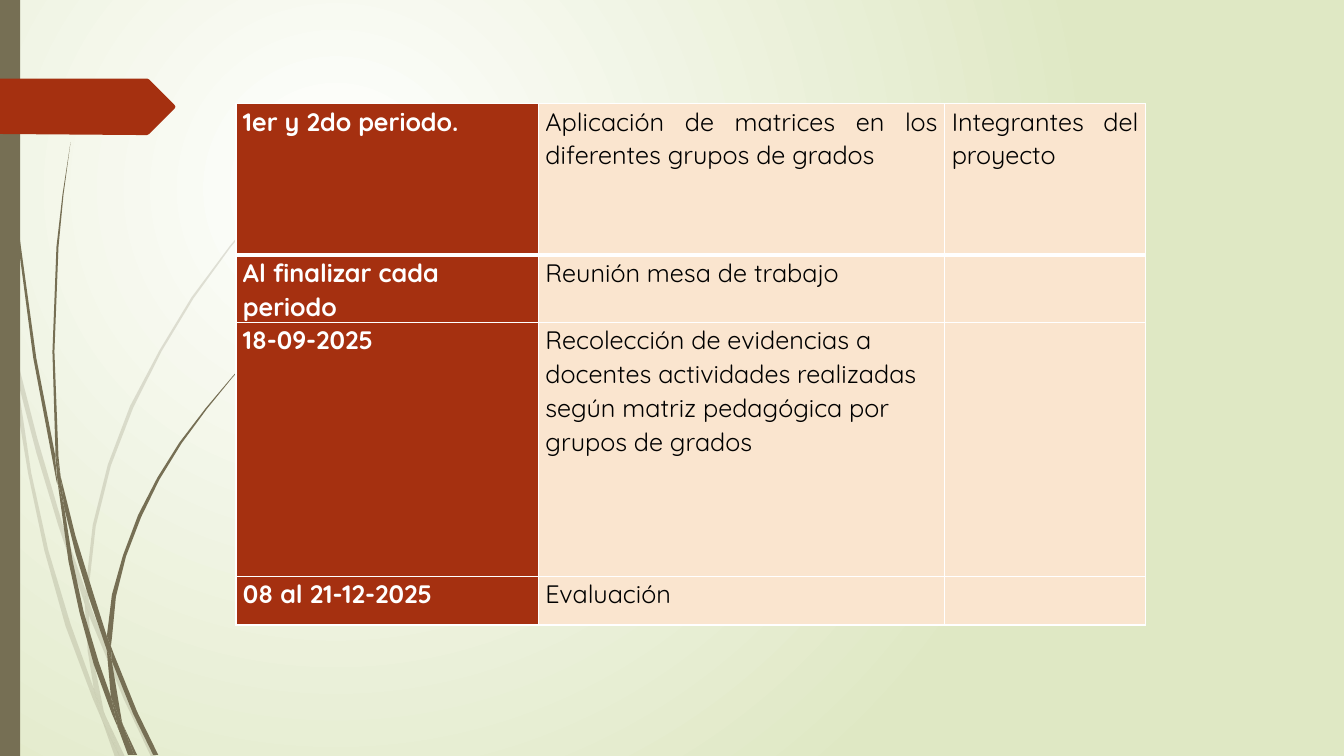
from lxml import etree
from pptx import Presentation
from pptx.dml.color import RGBColor
from pptx.enum.text import PP_ALIGN
from pptx.enum.shapes import MSO_SHAPE
from pptx.oxml.ns import qn
from pptx.util import Inches, Pt

LEFT, JUSTIFY = PP_ALIGN.LEFT, PP_ALIGN.JUSTIFY
RECTANGLE = MSO_SHAPE.RECTANGLE
GRID = Inches(0.01)
COLUMNS, ROWS = 1333, 750
WHITE = RGBColor(0xFF, 0xFF, 0xFF)
BLACK = RGBColor(0, 0, 0)
SAGE = RGBColor(0xDF, 0xE8, 0xC4)
OLIVE = RGBColor(0x76, 0x6F, 0x54)
RUST = RGBColor(0xA5, 0x30, 0x10)
CREAM = RGBColor(0xFA, 0xE5, 0xCF)
FONT = "Quicksand"
THIN, THICK = Pt(1), Pt(3)

PALE_BLADES = [
    [(11, 350), (9, 322), (0, 282), (0, 299), (10, 344)],
    [(58, 522), (84, 599), (85, 586), (62, 520), (37, 435), (14, 345),
     (17, 376), (36, 449)],
    [(92, 607), (88, 596), (88, 610), (123, 694), (150, 751), (155, 751),
     (127, 692)],
    [(119, 751), (124, 751), (105, 711)],
    [(93, 683), (70, 619), (48, 546), (31, 469), (17, 376), (11, 350),
     (18, 410), (28, 470), (44, 546), (65, 621), (92, 693), (101, 714),
     (99, 707)],
    [(84, 599), (87, 646), (93, 683), (96, 692), (105, 711), (103, 706),
     (91, 646), (88, 610), (88, 608)],
    [(88, 584), (95, 522), (110, 462), (132, 405), (160, 349), (192, 296),
     (229, 245), (268, 198), (290, 175), (312, 154), (312, 153), (289, 175),
     (268, 197), (228, 244), (190, 295), (158, 348), (129, 403), (107, 461),
     (92, 521), (85, 584), (85, 586), (88, 596)],
    [(101, 714), (114, 751), (119, 751)],
    [(88, 608), (88, 610), (88, 596), (85, 586), (84, 599)],
    [(96, 692), (93, 683), (99, 707), (101, 714), (119, 751), (105, 711)],
]
DARK_BLADES = [
    [(7, 110), (17, 233), (33, 355), (56, 477), (57, 481), (55, 457),
     (55, 453), (36, 355), (19, 232), (8, 109), (5, 48), (4, 0), (3, 0),
     (4, 48)],
    [(88, 592), (106, 645), (106, 633), (106, 631), (93, 590), (75, 532),
     (60, 472), (64, 505), (75, 549)],
    [(113, 649), (110, 641), (111, 656), (132, 708), (152, 749), (157, 749),
     (136, 706)],
    [(110, 691), (98, 657), (83, 607), (72, 556), (64, 505), (57, 477),
     (68, 557), (79, 608), (93, 659), (111, 708), (117, 722), (116, 717)],
    [(60, 472), (58, 453), (54, 349), (58, 245), (63, 193), (70, 141),
     (62, 193), (56, 245), (52, 349), (55, 449)],
    [(133, 749), (136, 749), (122, 719)],
    [(57, 477), (64, 505), (60, 472), (55, 449), (55, 453)],
    [(111, 633), (115, 592), (125, 552), (140, 513), (158, 476), (180, 440),
     (205, 406), (231, 374), (245, 359), (261, 344), (260, 344), (245, 358),
     (231, 373), (204, 405), (178, 439), (156, 474), (137, 511), (122, 551),
     (111, 590), (106, 631), (110, 641)],
    [(117, 722), (127, 749), (131, 749)],
    [(106, 645), (110, 691), (116, 706), (122, 719), (121, 716), (111, 656),
     (109, 651)],
    [(106, 645), (109, 651), (111, 656), (110, 641), (106, 631), (106, 633)],
    [(116, 706), (110, 691), (116, 717), (117, 722), (130, 749), (133, 749),
     (122, 719)],
]
BANNER = [(173, 108), (148, 133), (146, 134), (136, 134), (0, 133), (0, 78),
          (146, 78), (148, 79), (173, 104), (174, 106)]

TABLE_PLACE = (234, 103, 902, 498)
COLUMN_WIDTHS = (300, 403, 199)
ROW_HEIGHTS = (150, 48, 252, 48)
SCHEDULE = [
    [("1er y 2do periodo.", LEFT),
     ("Aplicación de matrices en los diferentes grupos de grados", JUSTIFY),
     ("Integrantes del proyecto", JUSTIFY)],
    [("Al finalizar cada periodo", LEFT),
     ("Reunión mesa de trabajo", JUSTIFY), ("", LEFT)],
    [("18-09-2025", LEFT),
     ("Recolección de evidencias a docentes actividades realizadas "
      "según matriz pedagógica por grupos de grados", LEFT), ("", LEFT)],
    [("08 al 21-12-2025", LEFT), ("Evaluación", LEFT), ("", LEFT)],
]


def paint_background(page):
    fill = page.background.fill
    fill.gradient()
    for stop, color in zip(fill.gradient_stops, (WHITE, SAGE)):
        stop.color.rgb = color
    gradient = next(page.element.iter(qn("a:gradFill")))
    for line in gradient.findall(qn("a:lin")):
        gradient.remove(line)
    circle = etree.SubElement(gradient, qn("a:path"), path="circle")
    etree.SubElement(circle, qn("a:fillToRect"),
                     l="50000", t="50000", r="100000", b="100000")


def paint_shape(shape, color, opacity=100):
    shape.shadow.inherit = False
    shape.line.fill.background()
    shape.fill.solid()
    shape.fill.fore_color.rgb = color
    if opacity < 100:
        tint = next(shape.element.spPr.iter(qn("a:srgbClr")))
        etree.SubElement(tint, qn("a:alpha"), val=str(opacity * 1000))


def add_outline(page, points, color, opacity=100):
    builder = page.shapes.build_freeform(*points[0], scale=GRID)
    builder.add_line_segments(points[1:], close=True)
    paint_shape(builder.convert_to_shape(), color, opacity)


def add_border(cell, side, width):
    properties = cell._tc.get_or_add_tcPr()
    line = etree.SubElement(properties, qn(f"a:ln{side}"), w=str(width))
    paint = etree.SubElement(line, qn("a:solidFill"))
    etree.SubElement(paint, qn("a:srgbClr"), val=str(WHITE))


def fill_cell(cell, row, column, text, alignment):
    widths = {"L": THIN, "R": THIN,
              "T": THICK if row == 1 else THIN,
              "B": THICK if row == 0 else THIN}
    for side, width in widths.items():
        add_border(cell, side, width)
    cell.fill.solid()
    cell.fill.fore_color.rgb = CREAM if column else RUST
    cell.margin_left = cell.margin_right = 7 * GRID
    cell.margin_top = cell.margin_bottom = 0
    if not text:
        return
    para = cell.text_frame.paragraphs[0]
    para.alignment = alignment
    para.line_spacing = 1.07
    para.space_after = Pt(8)
    span = para.add_run()
    span.text = text
    span.font.name = FONT
    span.font.size = Pt(18)
    span.font.bold = column == 0
    span.font.color.rgb = BLACK if column else WHITE


def add_schedule(page):
    place = [GRID * share for share in TABLE_PLACE]
    table = page.shapes.add_table(
        len(ROW_HEIGHTS), len(COLUMN_WIDTHS), *place).table
    for column, width in zip(table.columns, COLUMN_WIDTHS):
        column.width = GRID * width
    for row, height in zip(table.rows, ROW_HEIGHTS):
        row.height = GRID * height
    for row, entries in enumerate(SCHEDULE):
        for column, (text, alignment) in enumerate(entries):
            fill_cell(table.cell(row, column), row, column, text, alignment)


def main():
    deck = Presentation()
    deck.slide_width, deck.slide_height = GRID * COLUMNS, GRID * ROWS
    page = deck.slides.add_slide(deck.slide_layouts[6])
    paint_background(page)
    for blades, opacity in ((PALE_BLADES, 20), (DARK_BLADES, 100)):
        for blade in blades:
            add_outline(page, blade, OLIVE, opacity)
    band = page.shapes.add_shape(RECTANGLE, 0, 0, GRID * 20, GRID * ROWS)
    paint_shape(band, OLIVE)
    add_outline(page, BANNER, RUST)
    add_schedule(page)
    deck.save("out.pptx")


if __name__ == "__main__":
    main()
